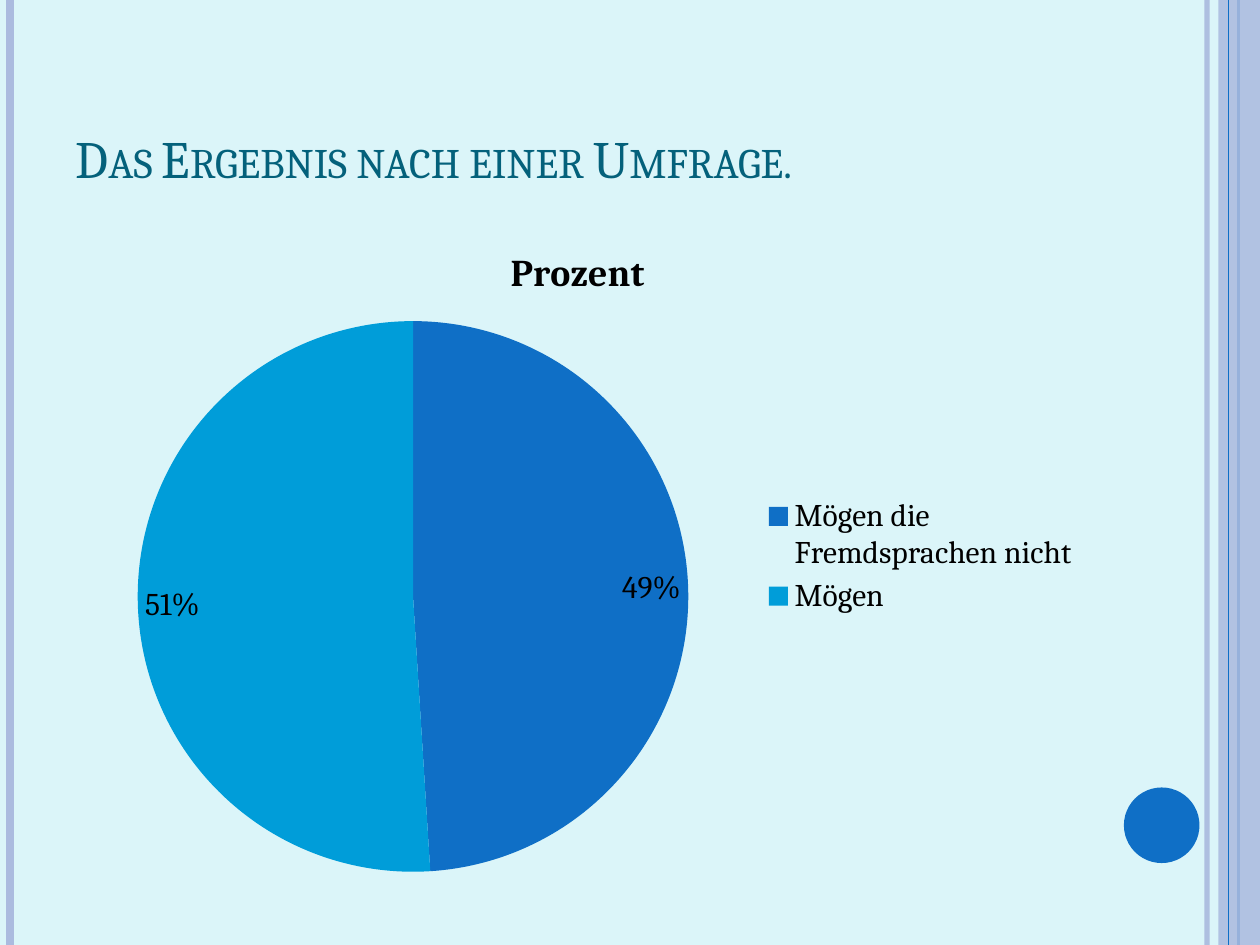
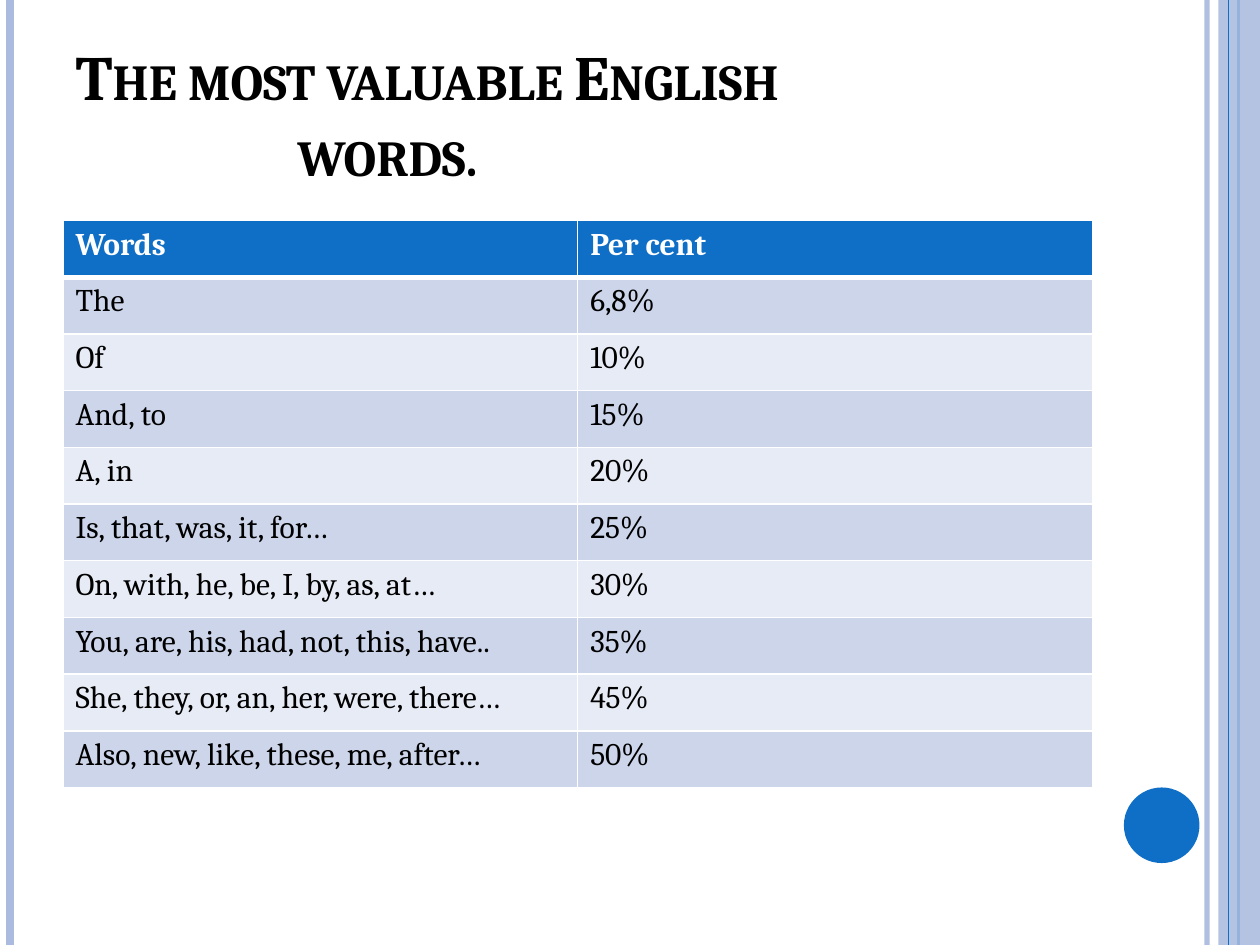
from lxml import etree
from pptx import Presentation
from pptx import util as u
from pptx.chart.data import CategoryChartData
from pptx.dml.color import RGBColor
from pptx.enum import chart as ch, shapes, text
from pptx.oxml.ns import qn

FONT = "Cambria"
BLUE = RGBColor(0x0F, 0x6F, 0xC6)
SKY = RGBColor(0x00, 0x9D, 0xD9)
LILAC = RGBColor(0xAB, 0xBB, 0xDF)
TEAL = RGBColor(0x04, 0x61, 0x7B)
ICE = RGBColor(0xDB, 0xF5, 0xF9)
WHITE = RGBColor(0xFF, 0xFF, 0xFF)
BLACK = RGBColor(0, 0, 0)
BANDS = (RGBColor(0xE7, 0xEB, 0xF5), RGBColor(0xCC, 0xD5, 0xEA))

TITLE_BOX = (0.5, 0.3, 8.17, 1.25)
BODY_BOX = (0.5, 1.75, 8.17, 5.33)
PAGE_HEIGHT = 7.5

WORDS = [
    ("Words", "Per cent"),
    ("The", "6,8%"),
    ("Of", "10%"),
    ("And, to", "15%"),
    ("A, in", "20%"),
    ("Is, that, was, it, for…", "25%"),
    ("On, with, he, be, I, by, as, at…", "30%"),
    ("You, are, his, had, not, this, have..", "35%"),
    ("She, they, or, an, her, were, there…", "45%"),
    ("Also, new, like, these, me, after…", "50%"),
]


def inches(box):
    return [u.Inches(v) for v in box]


def style(font, size, color, bold=False):
    font.name, font.size, font.bold = FONT, u.Pt(size), bold
    font.color.rgb = color


def write(p, content, size=18, color=BLACK, bold=False, small_caps=False, indent=0):
    p.alignment = text.PP_ALIGN.LEFT
    if indent:
        p._p.get_or_add_pPr().set("marL", str(u.Inches(indent)))
    r = p.add_run()
    r.text = content
    style(r.font, size, color, bold)
    if small_caps:
        r.font._element.set("cap", "small")


def set_alpha(sp, percent):
    color = sp._element.spPr.find(".//" + qn("a:srgbClr"))
    etree.SubElement(color, qn("a:alpha")).set("val", str(percent * 1000))


def add_rule(slide, x, color, width):
    line = slide.shapes.add_connector(
        shapes.MSO_CONNECTOR.STRAIGHT, *inches((x, 0, x, PAGE_HEIGHT)))
    line.line.color.rgb = color
    line.line.width = u.Pt(width)
    etree.SubElement(line._element.spPr, qn("a:effectLst"))
    return line


def add_solid(slide, kind, box, color):
    sp = slide.shapes.add_shape(kind, *inches(box))
    sp.shadow.inherit = False
    sp.fill.solid()
    sp.fill.fore_color.rgb = color
    sp.line.fill.background()
    return sp


def add_frame(slide):
    set_alpha(add_rule(slide, 9.58, LILAC, 3), 93)
    add_rule(slide, 0.08, LILAC, 4.5)
    add_rule(slide, 9.83, BLUE, 1.5)
    band = add_solid(slide, shapes.MSO_SHAPE.RECTANGLE, (9.67, 0, 0.33, PAGE_HEIGHT), LILAC)
    set_alpha(band, 87)
    add_rule(slide, 9.75, BLUE, 0.75)
    add_solid(slide, shapes.MSO_SHAPE.OVAL, (8.92, 6.25, 0.6, 0.6), BLUE)


def add_title(slide, lines, **fmt):
    title = slide.shapes.title
    title.left, title.top, title.width, title.height = inches(TITLE_BOX)
    tf = title.text_frame
    tf.auto_size = text.MSO_AUTO_SIZE.NONE
    tf.word_wrap = True
    tf.vertical_anchor = text.MSO_ANCHOR.BOTTOM
    for i, (content, indent) in enumerate(lines):
        p = tf.add_paragraph() if i else tf.paragraphs[0]
        write(p, content, indent=indent, small_caps=True, **fmt)


def new_slide(prs, background, lines, **fmt):
    slide = prs.slides.add_slide(prs.slide_layouts[5])
    slide.background.fill.solid()
    slide.background.fill.fore_color.rgb = background
    add_frame(slide)
    add_title(slide, lines, **fmt)
    return slide


def set_plot_layout(chart, **fractions):
    area = chart._chartSpace.find(".//" + qn("c:plotArea"))
    for old in area.findall(qn("c:layout")):
        area.remove(old)
    layout = etree.Element(qn("c:layout"))
    manual = etree.SubElement(layout, qn("c:manualLayout"))
    settings = {"layoutTarget": "inner", "xMode": "edge", "yMode": "edge", **fractions}
    for name, value in settings.items():
        etree.SubElement(manual, qn("c:" + name)).set("val", str(value))
    area.insert(0, layout)


def add_survey_pie(slide, box):
    data = CategoryChartData(number_format="0%")
    data.categories = ["Mögen die Fremdsprachen nicht", "Mögen"]
    data.add_series("Prozent", (0.49, 0.51))
    chart = slide.shapes.add_chart(ch.XL_CHART_TYPE.PIE, *inches(box), data).chart
    style(chart.font, 18, BLACK)
    chart.has_title = True
    p = chart.chart_title.text_frame.paragraphs[0]
    r = p.add_run()
    r.text = "Prozent"
    style(r.font, 21.6, BLACK, bold=True)
    chart.has_legend = True
    chart.legend.position = ch.XL_LEGEND_POSITION.RIGHT
    chart.legend.include_in_layout = False
    plot = chart.plots[0]
    plot.vary_by_categories = True
    for i, color in enumerate((BLUE, SKY)):
        fill = plot.series[0].points[i].format.fill
        fill.solid()
        fill.fore_color.rgb = color
    plot.has_data_labels = True
    labels = plot.data_labels
    labels.show_value = True
    labels.show_percentage = False
    labels.number_format = "0%"
    labels.number_format_is_linked = False
    labels.position = ch.XL_LABEL_POSITION.INSIDE_END
    style(labels.font, 18, BLACK)
    set_plot_layout(chart, x=0.07, y=0.15, w=0.54, h=0.82)


def set_borders(cell, **widths):
    tcPr = cell._tc.get_or_add_tcPr()
    for i, side in enumerate("LRTB"):
        ln = etree.Element(qn("a:ln" + side), w=str(u.Pt(widths.get(side, 1))))
        fill = etree.SubElement(ln, qn("a:solidFill"))
        etree.SubElement(fill, qn("a:srgbClr")).set("val", str(WHITE))
        tcPr.insert(i, ln)


def add_word_table(slide, box, row_height=0.45):
    left, top, width, _ = box
    size = (left, top, width, row_height * len(WORDS))
    table = slide.shapes.add_table(len(WORDS), 2, *inches(size)).table
    for i, row in enumerate(WORDS):
        header = i == 0
        for j, content in enumerate(row):
            cell = table.cell(i, j)
            cell.fill.solid()
            cell.fill.fore_color.rgb = BLUE if header else BANDS[i % 2]
            set_borders(cell, T=3 if i == 1 else 1, B=3 if header else 1)
            write(cell.text_frame.paragraphs[0], content,
                  color=WHITE if header else BLACK, bold=header)


def main():
    prs = Presentation()
    prs.slide_width, prs.slide_height = u.Inches(10), u.Inches(PAGE_HEIGHT)

    survey = new_slide(prs, ICE, [("Das Ergebnis nach einer Umfrage.", 0)],
                       size=30, color=TEAL)
    add_survey_pie(survey, BODY_BOX)

    words = new_slide(prs, WHITE, [("The most valuable English", 0), ("words.", 1.76)],
                      size=36, bold=True)
    add_word_table(words, BODY_BOX)

    prs.save("out.pptx")


if __name__ == "__main__":
    main()
